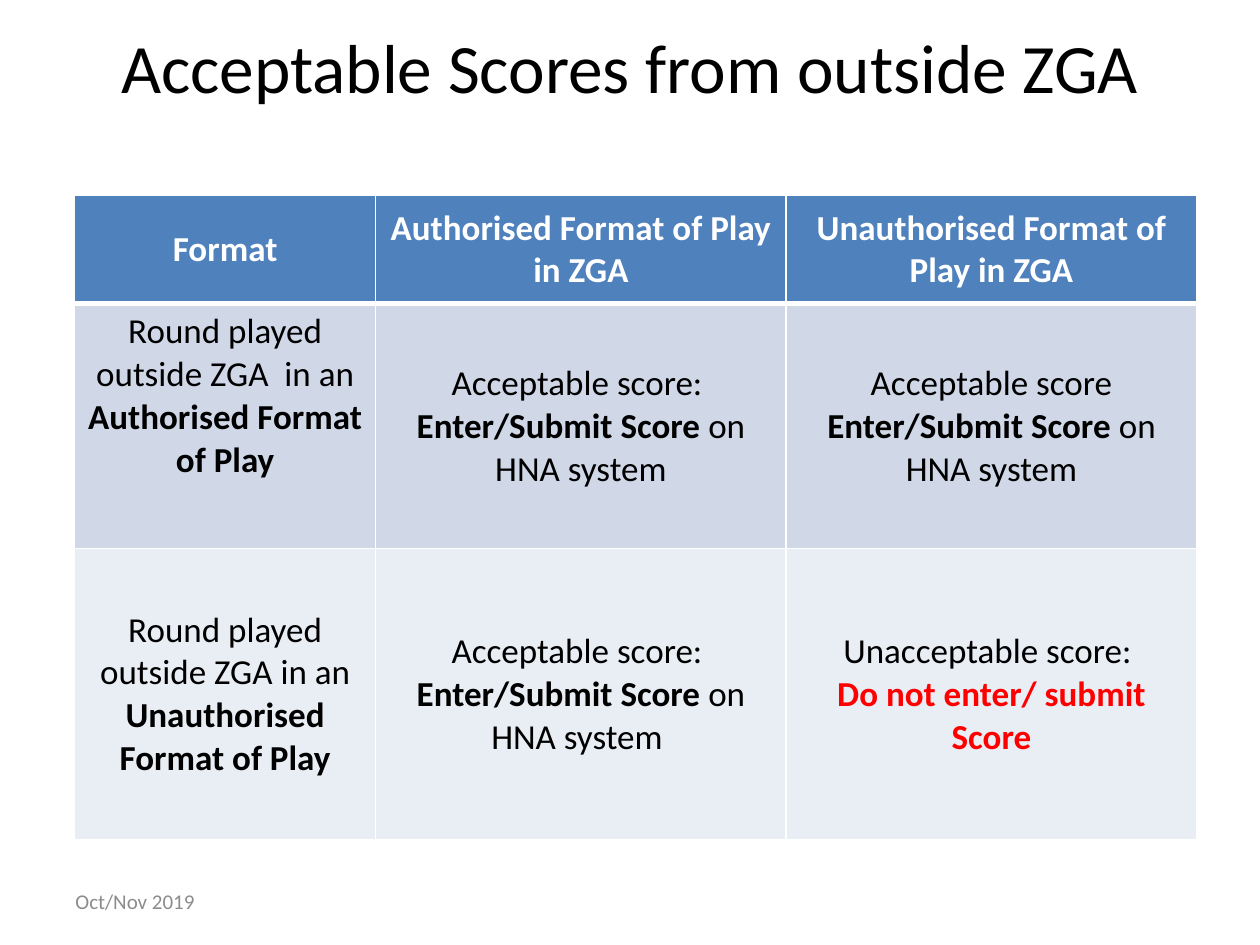
from lxml import etree
from pptx import Presentation
from pptx.dml.color import RGBColor
from pptx.enum import text
from pptx.oxml import ns
from pptx.util import Pt

COLORS = {"ink": "000000", "white": "FFFFFF", "header": "4F81BD", "allowed": "D0D8E8",
          "other": "E9EDF4", "warning": "FF0000", "date": "8C8C8C"}


class SlideBuilder:
    """Holds the style and the current slide."""

    font = "Calibri"

    def __init__(self, deck):
        self.slide = deck.slides.add_slide(deck.slide_layouts[5])

    def add_text(self, frame, paragraphs, size, align):
        frame.word_wrap = True
        for number, runs in enumerate(paragraphs):
            paragraph = frame.paragraphs[0] if number == 0 else frame.add_paragraph()
            paragraph.alignment = align
            for words, bold, color in runs:
                run = paragraph.add_run()
                run.text = words
                run.font.name, run.font.size, run.font.bold = self.font, Pt(size), bold
                run.font.color.rgb = RGBColor.from_string(COLORS[color])

    def title(self, words, left, top, width, height):
        heading = self.slide.shapes.title
        heading.left, heading.top, heading.width, heading.height = map(Pt, (left, top, width, height))
        heading.text_frame.vertical_anchor = text.MSO_ANCHOR.MIDDLE
        self.add_text(heading.text_frame, [[(words, False, "ink")]], 39.6, text.PP_ALIGN.CENTER)

    def label(self, words, left, top, width, height):
        box = self.slide.shapes.add_textbox(*map(Pt, (left, top, width, height)))
        box.text_frame.vertical_anchor = text.MSO_ANCHOR.MIDDLE
        self.add_text(box.text_frame, [[(words, False, "date")]], 12, text.PP_ALIGN.LEFT)

    def border(self, cell, side, width):
        line = etree.SubElement(cell._tc.get_or_add_tcPr(), ns.qn(f"a:{side}"), w=str(Pt(width)))
        fill = etree.SubElement(line, ns.qn("a:solidFill"))
        etree.SubElement(fill, ns.qn("a:srgbClr"), val=COLORS["white"])

    def table(self, rows, fills, left, top, widths, heights):
        grid = self.slide.shapes.add_table(
            len(rows), len(widths), *map(Pt, (left, top, sum(widths), sum(heights)))).table
        for column, width in zip(grid.columns, widths):
            column.width = Pt(width)
        for r, (contents, fill, height) in enumerate(zip(rows, fills, heights)):
            grid.rows[r].height = Pt(height)
            for c, paragraphs in enumerate(contents):
                cell = grid.cell(r, c)
                for side in ("lnL", "lnR", "lnT", "lnB"):
                    under_header = (r, side) in ((0, "lnB"), (1, "lnT"))
                    self.border(cell, side, 3 if under_header else 1)
                cell.fill.solid()
                cell.fill.fore_color.rgb = RGBColor.from_string(COLORS[fill])
                top_aligned = (r, c) == (1, 0)
                cell.vertical_anchor = text.MSO_ANCHOR.TOP if top_aligned else text.MSO_ANCHOR.MIDDLE
                self.add_text(cell.text_frame, paragraphs, 20, text.PP_ALIGN.CENTER)


def plain(words):
    return words, False, "ink"


def strong(words, color="ink"):
    return words, True, color


def main():
    deck = Presentation()
    deck.slide_width, deck.slide_height = Pt(720), Pt(540)
    page = SlideBuilder(deck)
    page.title("Acceptable Scores from outside ZGA", 36, -7.2, 648, 90)

    headings = ("Format", "Authorised Format of Play in ZGA", "Unauthorised Format of Play in ZGA")
    submit = [strong("Enter/Submit Score "), plain("on HNA system")]
    accepted = [[plain("Acceptable score: ")], submit]
    rows = [
        [[[strong(heading, "white")]] for heading in headings],
        [[[plain("Round played outside ZGA  in an "), strong("Authorised Format of Play")]],
         accepted,
         [[plain("Acceptable score")], submit]],
        [[[plain("Round played outside ZGA in an "), strong("Unauthorised Format of Play")]],
         [accepted[0], [submit[0], plain("on HNA system ")]],
         [[plain("Unacceptable score: ")], [strong("Do not enter/ submit Score", "warning")]]],
    ]
    page.table(rows, ("header", "allowed", "other"), 42.7, 111.6,
               (172, 234.6, 234.6), (62, 140, 166.4))
    page.label("Oct/Nov 2019", 36, 500.5, 168, 28.75)
    deck.save("out.pptx")


if __name__ == "__main__":
    main()
